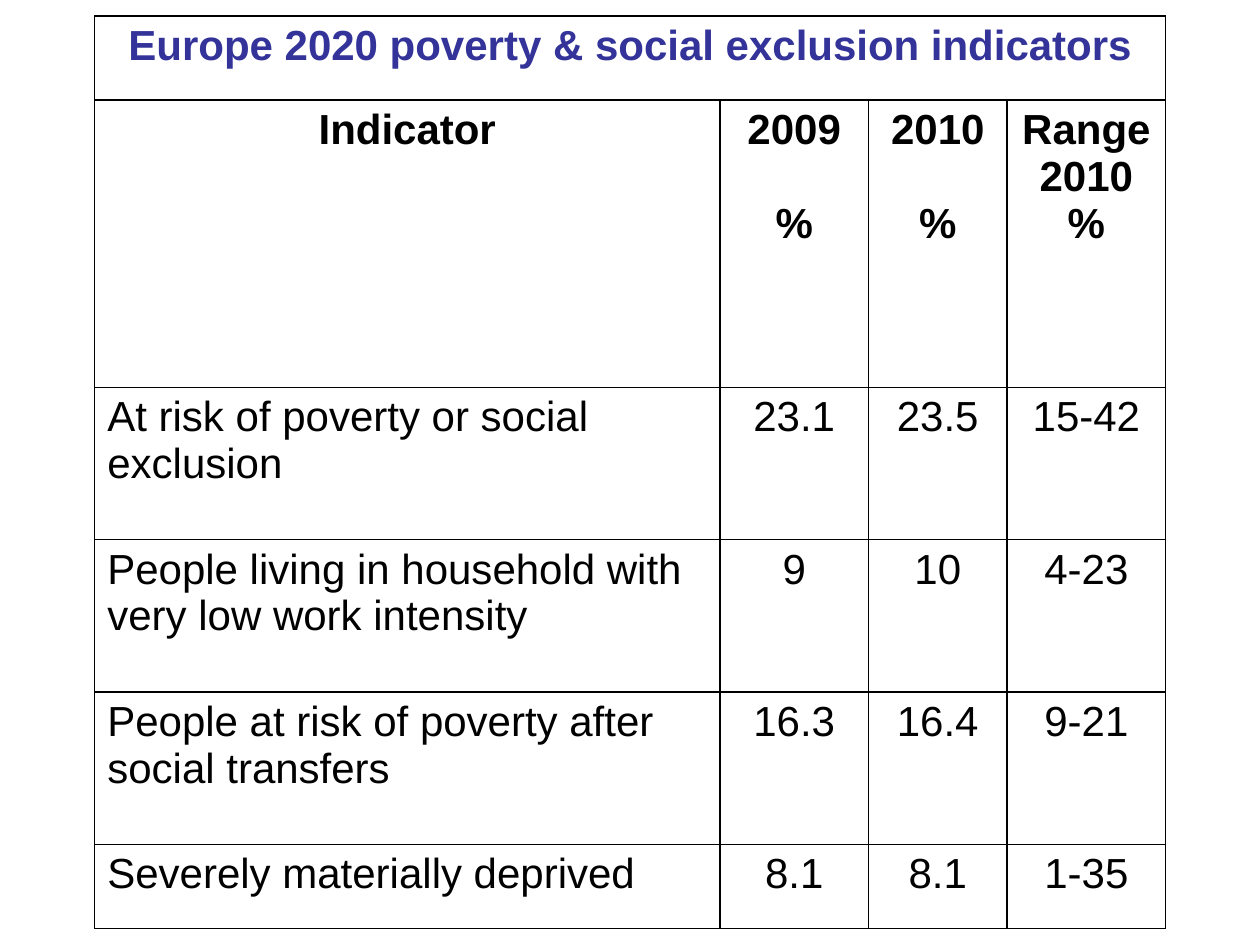
"""Build a slide with a table of Europe 2020 poverty indicators."""
from dataclasses import dataclass

from lxml import etree
from pptx import Presentation
from pptx.dml.color import RGBColor
from pptx.enum.text import PP_ALIGN
from pptx.oxml.ns import qn
from pptx.table import _Cell
from pptx.util import Cm, Pt

CENTER, LEFT = PP_ALIGN.CENTER, PP_ALIGN.LEFT
BLACK = RGBColor(0x00, 0x00, 0x00)
INDIGO = RGBColor(0x33, 0x33, 0x99)
FONT_NAME, FONT_SIZE = "Arial", Pt(24)
BORDER_WIDTH = Pt(1)

TITLE = "Europe 2020 poverty & social exclusion indicators"
COLUMN_WIDTHS = (12.6, 3.0, 2.79, 3.2)
TITLE_HEIGHT, HEADING_HEIGHT = 1.7, 5.79


@dataclass(frozen=True)
class Heading:
    label: str
    unit: str = ""
    unit_gap: int = 0


@dataclass(frozen=True)
class Indicator:
    name: str
    share_2009: str
    share_2010: str
    range_2010: str
    height: float = 3.07


HEADINGS = (
    Heading("Indicator"),
    Heading("2009", "%", 27),
    Heading("2010", "%", 27),
    Heading("Range 2010", "%"),
)
INDICATORS = (
    Indicator("At risk of poverty or social exclusion", "23.1", "23.5", "15-42"),
    Indicator("People living in household with very low work intensity", "9", "10", "4-23"),
    Indicator("People at risk of poverty after social transfers", "16.3", "16.4", "9-21"),
    Indicator("Severely materially deprived", "8.1", "8.1", "1-35", 1.7),
)


def frame_cell(cell: _Cell) -> None:
    """Give a cell four solid borders and no fill."""
    properties = cell._tc.get_or_add_tcPr()
    for side in ("lnL", "lnR", "lnT", "lnB"):
        border = etree.SubElement(properties, qn(f"a:{side}"), w=str(BORDER_WIDTH))
        solid = etree.SubElement(border, qn("a:solidFill"))
        etree.SubElement(solid, qn("a:srgbClr"), val=str(BLACK))
    cell.fill.background()


def write_cell(cell: _Cell, text: str, align: PP_ALIGN = CENTER,
               bold: bool = False, color: RGBColor = BLACK) -> None:
    """Write text into a cell, one paragraph per line."""
    cell.text = text
    for paragraph in cell.text_frame.paragraphs:
        paragraph.alignment = align
        paragraph.font.name = FONT_NAME
        paragraph.font.size = FONT_SIZE
        paragraph.font.bold = bold
        paragraph.font.color.rgb = color


def write_heading(cell: _Cell, heading: Heading) -> None:
    """Write a column heading with its unit below."""
    lines = [heading.label] + ([heading.unit] if heading.unit else [])
    write_cell(cell, "\n".join(lines), bold=True)
    if heading.unit_gap:
        cell.text_frame.paragraphs[-1].space_before = Pt(heading.unit_gap)


def write_indicator(cells: list[_Cell], indicator: Indicator) -> None:
    """Write one indicator's name and figures across a row."""
    write_cell(cells[0], indicator.name, LEFT)
    figures = (indicator.share_2009, indicator.share_2010, indicator.range_2010)
    for cell, figure in zip(cells[1:], figures):
        write_cell(cell, figure)


def main() -> None:
    """Create the presentation and save it."""
    presentation = Presentation()
    presentation.slide_width, presentation.slide_height = Cm(25.4), Cm(19.05)
    slide = presentation.slides.add_slide(presentation.slide_layouts[6])

    heights = [TITLE_HEIGHT, HEADING_HEIGHT] + [item.height for item in INDICATORS]
    table = slide.shapes.add_table(
        len(heights), len(COLUMN_WIDTHS), Cm(1.91), Cm(0.32),
        Cm(sum(COLUMN_WIDTHS)), Cm(sum(heights))).table
    table.first_row = table.horz_banding = False
    for column, width in zip(table.columns, COLUMN_WIDTHS):
        column.width = Cm(width)
    for row, height in zip(table.rows, heights):
        row.height = Cm(height)
    for cell in table.iter_cells():
        frame_cell(cell)

    title_cell = table.cell(0, 0)
    title_cell.merge(table.cell(0, len(COLUMN_WIDTHS) - 1))
    write_cell(title_cell, TITLE, bold=True, color=INDIGO)
    for cell, heading in zip(table.rows[1].cells, HEADINGS):
        write_heading(cell, heading)
    for row, indicator in zip(list(table.rows)[2:], INDICATORS):
        write_indicator(list(row.cells), indicator)

    presentation.save("out.pptx")


if __name__ == "__main__":
    main()
